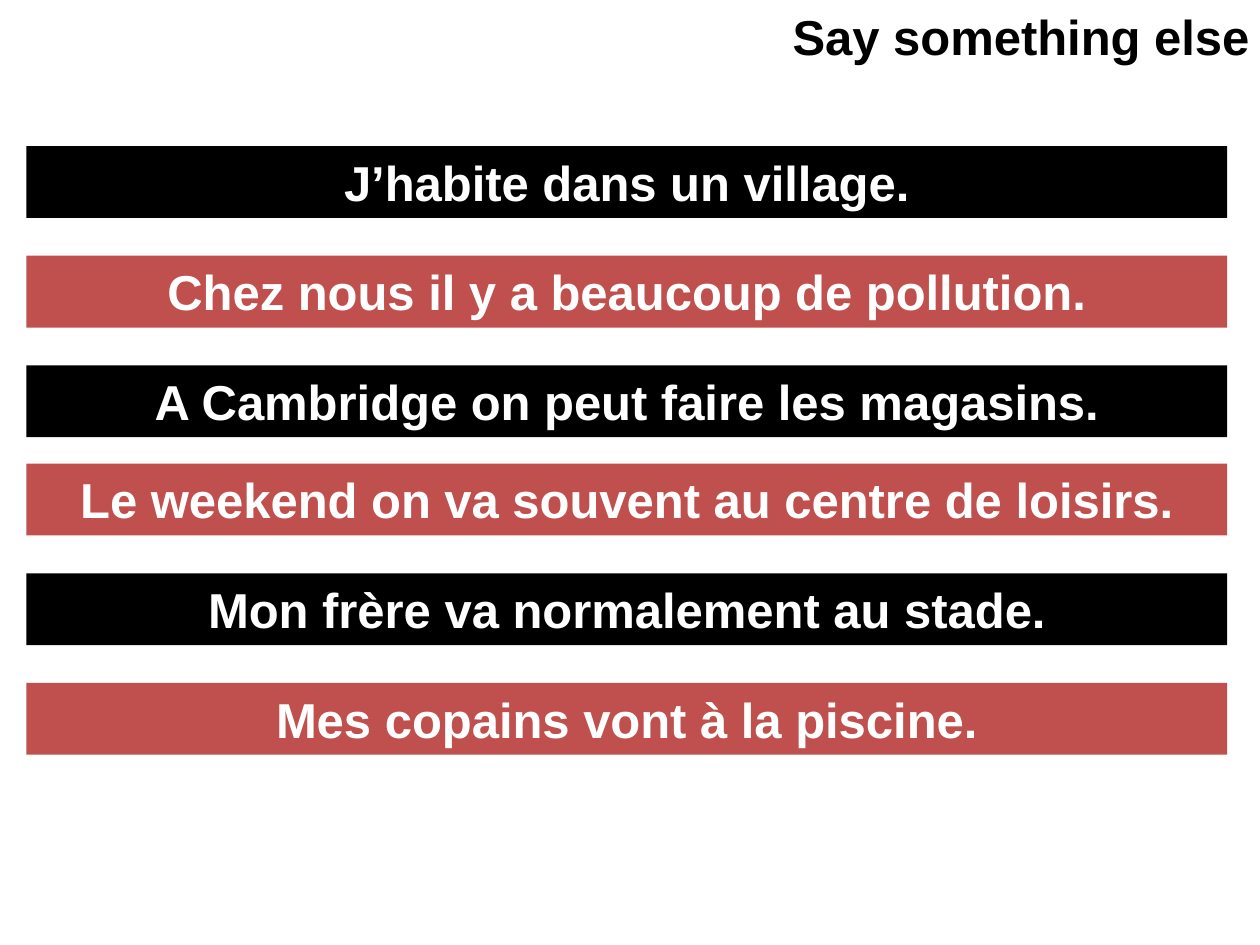
"""Build a French speaking-practice slide with six alternating sentence bars."""
from pptx import Presentation
from pptx.dml.color import RGBColor
from pptx.enum.shapes import MSO_SHAPE as Shape
from pptx.enum.text import MSO_ANCHOR as Anchor, MSO_AUTO_SIZE as AutoSize, PP_ALIGN as Align
from pptx.util import Inches, Pt

THEME = {
    "text": RGBColor.from_string("000000"),
    "bar_text": RGBColor.from_string("FFFFFF"),
    "bars": [RGBColor.from_string("000000"), RGBColor.from_string("C0504D")],
    "font": {"name": "Arial", "size": Pt(28), "bold": True},
}
SENTENCES = [
    "J’habite dans un village.",
    "Chez nous il y a beaucoup de pollution.",
    "A Cambridge on peut faire les magasins.",
    "Le weekend on va souvent au centre de loisirs.",
    "Mon frère va normalement au stade.",
    "Mes copains vont à la piscine.",
]
BAR_HEIGHT = 0.57
BAR_STEP = 0.87
GROUP_TOPS = [1.16, 3.68]
GROUP_SIZE = 3


def set_attributes(target, values):
    for name, value in values.items():
        setattr(target, name, value)


def write_text(shape, text, color, alignment):
    frame = shape.text_frame
    set_attributes(frame, {
        "text": text,
        "word_wrap": True,
        "auto_size": AutoSize.SHAPE_TO_FIT_TEXT,
        "vertical_anchor": Anchor.TOP,
    })
    paragraph = frame.paragraphs[0]
    paragraph.alignment = alignment
    font = paragraph.runs[0].font
    set_attributes(font, THEME["font"])
    font.color.rgb = color


presentation = Presentation()
set_attributes(presentation, {"slide_width": Inches(10), "slide_height": Inches(7.5)})
slide = presentation.slides.add_slide(presentation.slide_layouts.get_by_name("Title Only"))

title = slide.shapes.title
set_attributes(title, {
    "left": Inches(6.19),
    "top": Inches(0),
    "width": Inches(6.02),
    "height": Inches(BAR_HEIGHT),
})
write_text(title, "Say something else", THEME["text"], Align.LEFT)

for index, sentence in enumerate(SENTENCES):
    group, row = divmod(index, GROUP_SIZE)
    top = GROUP_TOPS[group] + row * BAR_STEP
    bar = slide.shapes.add_shape(
        Shape.RECTANGLE, Inches(0.21), Inches(top), Inches(9.53), Inches(BAR_HEIGHT)
    )
    bar.shadow.inherit = False
    bar.fill.solid()
    bar.fill.fore_color.rgb = THEME["bars"][index % 2]
    bar.line.fill.background()
    write_text(bar, sentence, THEME["bar_text"], Align.CENTER)

presentation.save("out.pptx")
